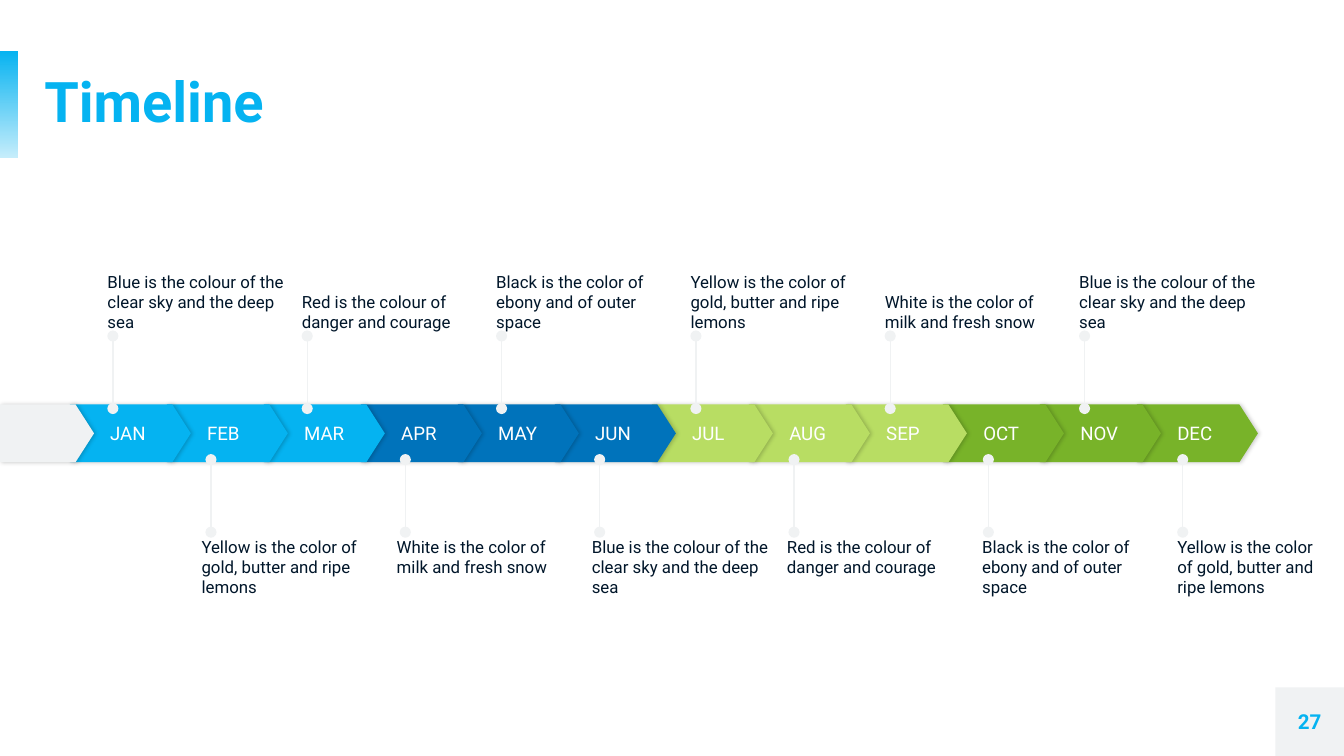
"""Build a twelve-month timeline slide with alternating notes."""
from lxml import etree
from pptx import Presentation
from pptx import util as u
from pptx.dml.color import RGBColor
from pptx.enum import shapes, text
from pptx.oxml.ns import qn

SKY = RGBColor(0x05, 0xB3, 0xF1)
BLUE = RGBColor(0x00, 0x73, 0xBB)
LIME = RGBColor(0xB8, 0xDD, 0x63)
GREEN = RGBColor(0x78, 0xB3, 0x29)
PALE = RGBColor(0xF0, 0xF2, 0xF3)
INK = RGBColor(0x00, 0x16, 0x2A)
WHITE = RGBColor(0xFF, 0xFF, 0xFF)

TITLE, PAGE = "Timeline", "27"
QUARTERS = [
    (SKY, ["JAN", "FEB", "MAR"]),
    (BLUE, ["APR", "MAY", "JUN"]),
    (LIME, ["JUL", "AUG", "SEP"]),
    (GREEN, ["OCT", "NOV", "DEC"]),
]
SKY_NOTE = "Blue is the colour of the clear sky and the deep sea"
LEMON_NOTE = "Yellow is the color of gold, butter and ripe lemons"
MILK_NOTE = "White is the color of milk and fresh snow"
DANGER_NOTE = "Red is the colour of danger and courage"
SPACE_NOTE = "Black is the color of ebony and of outer space"
UPPER_NOTES = [SKY_NOTE, DANGER_NOTE, SPACE_NOTE, LEMON_NOTE, MILK_NOTE, SKY_NOTE]
LOWER_NOTES = [LEMON_NOTE, MILK_NOTE, SKY_NOTE, DANGER_NOTE, SPACE_NOTE, LEMON_NOTE]

WIDTH = 10
HEIGHT = WIDTH * 9 / 16
BAND_TOP, BAND_HEIGHT, MONTH_WIDTH = 3.01, 0.43, 0.9
FIRST_MONTH, LAST_MONTH = 0.52, 8.46
NOTE_WIDTH, NOTE_HEIGHT = 1.37, 0.58
NOTE_ROWS = [
    dict(notes=UPPER_NOTES, pins=(0.84, 8.07), ends=(3.04, 2.5), left=(0.8, 8.03),
         top=1.89, anchor=text.MSO_ANCHOR.BOTTOM, last_width=NOTE_WIDTH),
    dict(notes=LOWER_NOTES, pins=(1.57, 8.8), ends=(3.96, 3.42), left=(1.5, 8.76),
         top=3.99, anchor=text.MSO_ANCHOR.TOP, last_width=1.13),
]


def inches(*lengths):
    return [u.Inches(length) for length in lengths]


def spread(limits, count):
    first, last = limits
    return [first + i * (last - first) / (count - 1) for i in range(count)]


def write(holder, words, size, color, bold=False, anchor=text.MSO_ANCHOR.MIDDLE,
          align=text.PP_ALIGN.LEFT, inset=0):
    frame = holder.text_frame
    layout = dict(word_wrap=True, vertical_anchor=anchor, margin_left=u.Inches(inset),
                  margin_right=0, margin_top=0, margin_bottom=0)
    for key, value in layout.items():
        setattr(frame, key, value)
    paragraph = frame.paragraphs[0]
    paragraph.alignment = align
    run = paragraph.add_run()
    run.text = words
    for key, value in dict(name="Roboto", size=u.Pt(size), bold=bold).items():
        setattr(run.font, key, value)
    run.font.color.rgb = color
    return paragraph


def add_text(slide, box, words, size, color, **options):
    return write(slide.shapes.add_textbox(*inches(*box)), words, size, color, **options)


def add_block(slide, kind, box, color):
    block = slide.shapes.add_shape(kind, *inches(*box))
    block.shadow.inherit = False
    block.line.fill.background()
    block.fill.solid()
    block.fill.fore_color.rgb = color
    return block


def add_arrow(slide, left, width, color):
    arrow = add_block(slide, shapes.MSO_SHAPE.PENTAGON,
                      (left, BAND_TOP, width, BAND_HEIGHT), color)
    arrow.adjustments[0] = 0.32
    effects = arrow._element.spPr.find(qn("a:effectLst"))
    shade = etree.SubElement(effects, qn("a:outerShdw"), blurRad=str(u.Pt(2.2)),
                             dist=str(u.Pt(0.8)), dir="0", algn="ctr", rotWithShape="0")
    black = etree.SubElement(shade, qn("a:srgbClr"), val="000000")
    etree.SubElement(black, qn("a:alpha"), val="20000")
    return arrow


def add_pin(slide, x, start, end):
    pin = slide.shapes.add_connector(shapes.MSO_CONNECTOR.STRAIGHT,
                                     *inches(x, start, x, end))
    pin.line.color.rgb = PALE
    pin.line.width = u.Pt(0.75)
    for tip in ("a:headEnd", "a:tailEnd"):
        etree.SubElement(pin.line._get_or_add_ln(), qn(tip), type="oval")
    etree.SubElement(pin._element.spPr, qn("a:effectLst"))


def add_frame(slide):
    accent = add_block(slide, shapes.MSO_SHAPE.RECTANGLE, (-0.01, 0.38, 0.14, 0.79), SKY)
    accent.fill.gradient()
    accent.fill.gradient_angle = 90
    for stop in accent.fill.gradient_stops:
        stop.color.rgb = SKY
    faded = next(accent._element.spPr.iter(qn("a:srgbClr")))
    etree.SubElement(faded, qn("a:alpha"), val="22000")
    corner = add_block(slide, shapes.MSO_SHAPE.RECTANGLE,
                       (WIDTH - 0.51, HEIGHT - 0.51, 0.51, 0.51), PALE)
    write(corner, PAGE, 11, SKY, bold=True, align=text.PP_ALIGN.CENTER)
    heading = add_text(slide, (0.33, 0.39, 9.27, 0.77), TITLE, 30, SKY, bold=True)
    heading.line_spacing = 0.9


def add_months(slide):
    months = [(name, color) for color, names in QUARTERS for name in names]
    columns = list(zip(months, spread((FIRST_MONTH, LAST_MONTH), len(months))))
    for (name, color), left in reversed(columns):
        arrow = add_arrow(slide, left, MONTH_WIDTH, color)
        write(arrow, name, 10, WHITE, inset=0.3)
    add_arrow(slide, 0, 0.7, PALE)


def add_notes(slide, row):
    count = len(row["notes"])
    widths = [NOTE_WIDTH] * (count - 1) + [row["last_width"]]
    columns = zip(row["notes"], spread(row["pins"], count), spread(row["left"], count), widths)
    for note, pin, left, width in columns:
        add_pin(slide, pin, *row["ends"])
        add_text(slide, (left, row["top"], width, NOTE_HEIGHT), note, 9, INK,
                 anchor=row["anchor"])


def main():
    deck = Presentation()
    deck.slide_width, deck.slide_height = inches(WIDTH, HEIGHT)
    slide = deck.slides.add_slide(deck.slide_layouts[6])
    add_frame(slide)
    add_months(slide)
    for row in NOTE_ROWS:
        add_notes(slide, row)
    deck.save("out.pptx")


if __name__ == "__main__":
    main()
